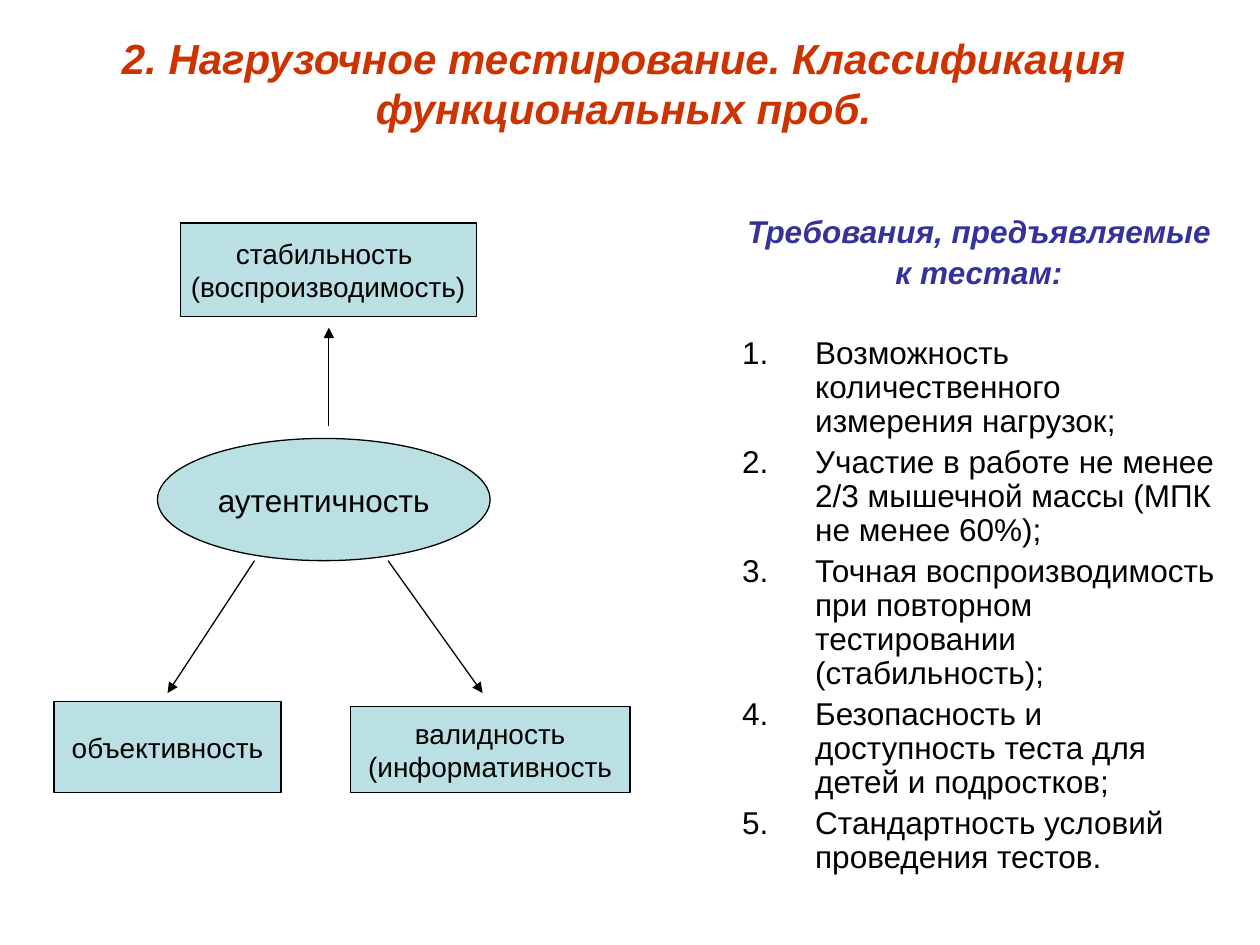
from dataclasses import dataclass

from lxml import etree
from pptx import Presentation
from pptx.dml.color import RGBColor
from pptx.enum.shapes import MSO_CONNECTOR, MSO_SHAPE
from pptx.enum.text import MSO_ANCHOR, MSO_AUTO_SIZE, PP_ALIGN
from pptx.oxml.ns import qn
from pptx.util import Inches, Pt

STRAIGHT = MSO_CONNECTOR.STRAIGHT
RECTANGLE, OVAL = MSO_SHAPE.RECTANGLE, MSO_SHAPE.OVAL
TOP, MIDDLE = MSO_ANCHOR.TOP, MSO_ANCHOR.MIDDLE
NO_AUTOFIT = MSO_AUTO_SIZE.NONE
LEFT, CENTER = PP_ALIGN.LEFT, PP_ALIGN.CENTER
CELL = Inches(0.01)
COLUMNS, ROWS = 1000, 750


@dataclass(frozen=True)
class Theme:
    """Hold the colours, font and type sizes of the slide."""

    font: str = "Arial"
    title: RGBColor = RGBColor(0xCC, 0x33, 0x00)
    heading: RGBColor = RGBColor(0x33, 0x33, 0x99)
    ink: RGBColor = RGBColor(0x00, 0x00, 0x00)
    fill: RGBColor = RGBColor(0xBB, 0xE0, 0xE3)
    title_size: int = 24
    body_size: int = 18
    label_size: int = 16
    line_width: float = 0.75


@dataclass(frozen=True)
class Box:
    """Describe a region in columns and rows of the slide grid."""

    column: int
    row: int
    columns: int
    rows: int

    def point(self, column, row):
        """Return the slide position of a grid point inside the box."""
        return (self.column + column) * CELL, (self.row + row) * CELL

    def area(self, column, row, columns, rows):
        """Return left, top, width and height of an area inside the box."""
        return *self.point(column, row), columns * CELL, rows * CELL


THEME = Theme()
TITLE = "2. Нагрузочное тестирование. Классификация функциональных проб."
HEADING = ["Требования, предъявляемые", "к тестам:"]
REQUIREMENTS = [
    "Возможность количественного измерения нагрузок;",
    "Участие в работе не менее 2/3 мышечной массы (МПК не менее 60%);",
    "Точная воспроизводимость при повторном тестировании (стабильность);",
    "Безопасность и доступность теста для детей и подростков;",
    "Стандартность условий проведения тестов.",
]
NODES = [
    (OVAL, (82, 171, 264, 97), ["аутентичность"], THEME.body_size),
    (RECTANGLE, (235, 384, 222, 68), ["валидность", "(информативность"], THEME.label_size),
    (RECTANGLE, (100, 0, 235, 74), ["стабильность ", "(воспроизводимость)"], THEME.label_size),
    (RECTANGLE, (0, 380, 180, 72), ["объективность"], THEME.label_size),
]
ARROWS = [
    ((159, 268), (90, 373)),
    ((265, 268), (340, 373)),
    ((218, 161), (218, 83)),
]


def apply_format(target, values):
    """Set each attribute of the target from a dict."""
    for name, value in values.items():
        setattr(target, name, value)


def place(shape, bounds):
    """Move and size a shape."""
    apply_format(shape, dict(zip(("left", "top", "width", "height"), bounds)))


def write_lines(frame, lines, size, color, emphasis=False, alignment=CENTER):
    """Write one formatted paragraph per line and return the paragraphs."""
    frame.text = "\n".join(lines)
    for paragraph in frame.paragraphs:
        paragraph.alignment = alignment
        font = {"name": THEME.font, "size": Pt(size), "bold": emphasis, "italic": emphasis}
        apply_format(paragraph.runs[0].font, font)
        paragraph.runs[0].font.color.rgb = color
    return frame.paragraphs


def set_bullet(paragraph, indent, numbered):
    """Give a paragraph a hanging indent and a number, or no bullet."""
    properties = paragraph._p.get_or_add_pPr()
    properties.set("marL", str(indent))
    properties.set("indent", str(-indent))
    if numbered:
        etree.SubElement(properties, qn("a:buFont"), typeface="+mj-lt")
        etree.SubElement(properties, qn("a:buAutoNum"), type="arabicPeriod")
    else:
        etree.SubElement(properties, qn("a:buNone"))


def add_title(slide, box):
    """Fill the title placeholder."""
    title = slide.shapes.title
    place(title, box.area(0, 0, box.columns, box.rows))
    frame = title.text_frame
    write_lines(frame, [TITLE], THEME.title_size, THEME.title, emphasis=True)
    apply_format(frame, {"vertical_anchor": MIDDLE, "auto_size": NO_AUTOFIT, "word_wrap": True})


def add_node(slide, box, kind, cells, lines, size):
    """Add one labelled outline of the diagram."""
    node = slide.shapes.add_shape(kind, *box.area(*cells))
    node.shadow.inherit = False
    node.fill.solid()
    node.fill.fore_color.rgb = THEME.fill
    node.line.color.rgb = THEME.ink
    node.line.width = Pt(THEME.line_width)
    write_lines(node.text_frame, lines, size, THEME.ink)
    apply_format(node.text_frame, {"vertical_anchor": MIDDLE, "word_wrap": False})


def add_arrow(slide, box, start, end):
    """Add a straight arrow between two grid points of the box."""
    arrow = slide.shapes.add_connector(STRAIGHT, *box.point(*start), *box.point(*end))
    arrow.line.color.rgb = THEME.ink
    arrow.line.width = Pt(THEME.line_width)
    properties = arrow._element.spPr
    etree.SubElement(properties.find(qn("a:ln")), qn("a:tailEnd"), type="triangle")
    etree.SubElement(properties, qn("a:effectLst"))


def add_diagram(slide, box):
    """Draw the test qualities around their centre."""
    for node in NODES:
        add_node(slide, box, *node)
    for start, end in ARROWS:
        add_arrow(slide, box, start, end)


def add_requirements(slide, box):
    """Fill the body placeholder with a heading and a numbered list."""
    body = slide.placeholders[1]
    place(body, box.area(0, 0, box.columns, box.rows))
    frame = body.text_frame
    apply_format(frame, {"vertical_anchor": TOP, "auto_size": NO_AUTOFIT, "word_wrap": True})
    paragraphs = write_lines(frame, HEADING + REQUIREMENTS, THEME.body_size, THEME.ink, alignment=LEFT)
    first_item = len(HEADING)
    for index, paragraph in enumerate(paragraphs):
        apply_format(paragraph, {"line_spacing": 0.9, "space_before": Pt(4)})
        numbered = index >= first_item
        set_bullet(paragraph, 58 * CELL if numbered else 0, numbered)
        if not numbered:
            paragraph.alignment = CENTER
            apply_format(paragraph.runs[0].font, {"bold": True, "italic": True})
            paragraph.runs[0].font.color.rgb = THEME.heading
    paragraphs[0].space_before = Pt(0)
    paragraphs[first_item].space_before = Pt(26)
    frame.margin_top = 42 * CELL


def main():
    """Build and save the slide."""
    presentation = Presentation()
    presentation.slide_width = COLUMNS * CELL
    presentation.slide_height = ROWS * CELL
    slide = presentation.slides.add_slide(presentation.slide_layouts[1])
    add_title(slide, Box(16, 18, 958, 95))
    add_diagram(slide, Box(43, 177, 457, 452))
    add_requirements(slide, Box(579, 130, 396, 577))
    presentation.save("out.pptx")


if __name__ == "__main__":
    main()
